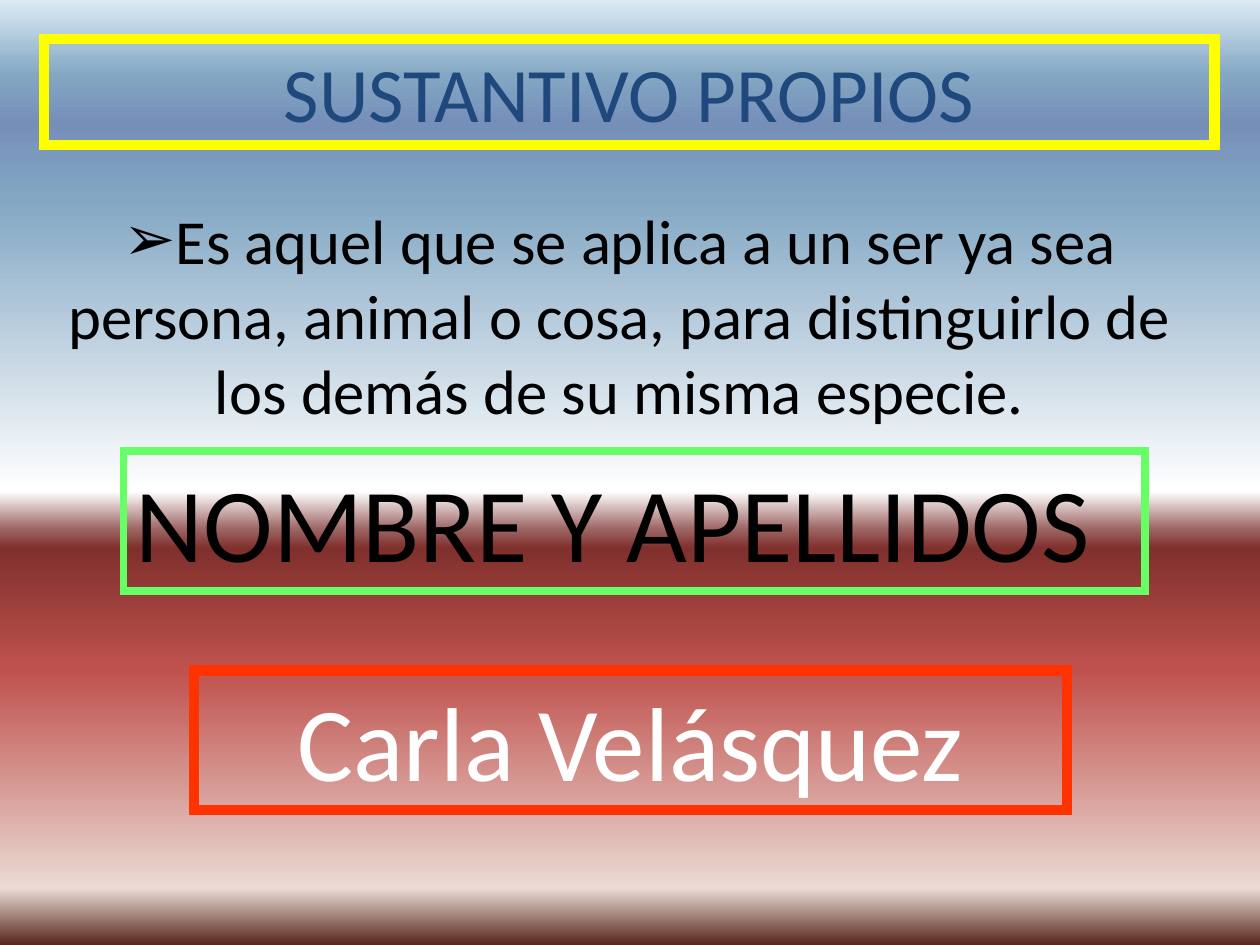
from lxml import etree
from pptx import Presentation
from pptx.dml.color import RGBColor
from pptx.enum import shapes, text
from pptx.oxml.ns import qn
from pptx.util import Inches, Pt

FONT = "Calibri"
YELLOW = RGBColor(0xFF, 0xFF, 0x00)
GREEN = RGBColor(0x66, 0xFF, 0x66)
RED = RGBColor(0xFF, 0x33, 0x00)
NAVY = RGBColor(0x1F, 0x49, 0x7D)
BLACK = RGBColor(0x00, 0x00, 0x00)
WHITE = RGBColor(0xFF, 0xFF, 0xFF)
SKY_TO_EARTH = [
    (0, "DCEBF5"), (8, "83A7C3"), (13, "768FB9"), (21, "83A7C3"),
    (52, "FFFFFF"), (56, "9C6563"), (58, "80302D"), (71, "C0524E"),
    (94, "EBDAD4"), (100, "55261C"),
]


def paint_background(slide):
    fill = slide.background.fill
    fill.gradient()
    grad = fill._fill._gradFill
    stops = grad.find(qn("a:gsLst"))
    for stop in list(stops):
        stops.remove(stop)
    for percent, color in SKY_TO_EARTH:
        stop = etree.SubElement(stops, qn("a:gs"), pos=str(percent * 1000))
        etree.SubElement(stop, qn("a:srgbClr"), val=color)
    grad.find(qn("a:lin")).set("ang", str(90 * 60000))


def place(sp, box):
    sp.left, sp.top, sp.width, sp.height = (Inches(n) for n in box)


def write(sp, words, size, color, align, anchor):
    tf = sp.text_frame
    tf.text = words
    tf.word_wrap = True
    tf.auto_size = text.MSO_AUTO_SIZE.NONE
    tf.vertical_anchor = anchor
    p = tf.paragraphs[0]
    p.alignment = align
    font = p.runs[0].font
    font.name, font.size, font.color.rgb = FONT, Pt(size), color
    return p


def frame(sp, color, width):
    """Give the shape a hollow, square-cornered border."""
    sp.fill.background()
    sp.line.color.rgb = color
    sp.line.width = Pt(width)
    etree.SubElement(sp.line._get_or_add_ln(), qn("a:miter"), lim="800000")


def add_title(slide, box):
    sp = slide.shapes.title
    place(sp, box)
    frame(sp, YELLOW, 6)
    write(sp, "SUSTANTIVO PROPIOS", 44, NAVY,
          text.PP_ALIGN.CENTER, text.MSO_ANCHOR.MIDDLE)


def add_definition(slide, box):
    sp = slide.placeholders[1]
    place(sp, box)
    p = write(sp, "Es aquel que se aplica a un ser ya sea persona, animal o cosa, "
              "para distinguirlo de los demás de su misma especie.", 35.8, BLACK,
              text.PP_ALIGN.CENTER, text.MSO_ANCHOR.TOP)
    etree.SubElement(p._p.get_or_add_pPr(), qn("a:buChar"), char="➢")


def add_framed_label(slide, box, words, border, width, color, align):
    sp = slide.shapes.add_shape(shapes.MSO_SHAPE.RECTANGLE, *(Inches(n) for n in box))
    sp.shadow.inherit = False
    frame(sp, border, width)
    write(sp, words, 60, color, align, text.MSO_ANCHOR.TOP)


def main():
    prs = Presentation()
    prs.slide_width, prs.slide_height = Inches(10), Inches(7.5)
    slide = prs.slides.add_slide(prs.slide_layouts[0])
    paint_background(slide)
    add_title(slide, (0.35, 0.31, 9.29, 0.84))
    add_definition(slide, (0.19, 1.55, 9.45, 1.73))
    add_framed_label(slide, (0.98, 3.58, 8.11, 1.11), "NOMBRE Y APELLIDOS",
                     GREEN, 4.5, BLACK, text.PP_ALIGN.LEFT)
    add_framed_label(slide, (1.54, 5.32, 6.93, 1.11), "Carla Velásquez",
                     RED, 6, WHITE, text.PP_ALIGN.CENTER)
    prs.save("out.pptx")


if __name__ == "__main__":
    main()
